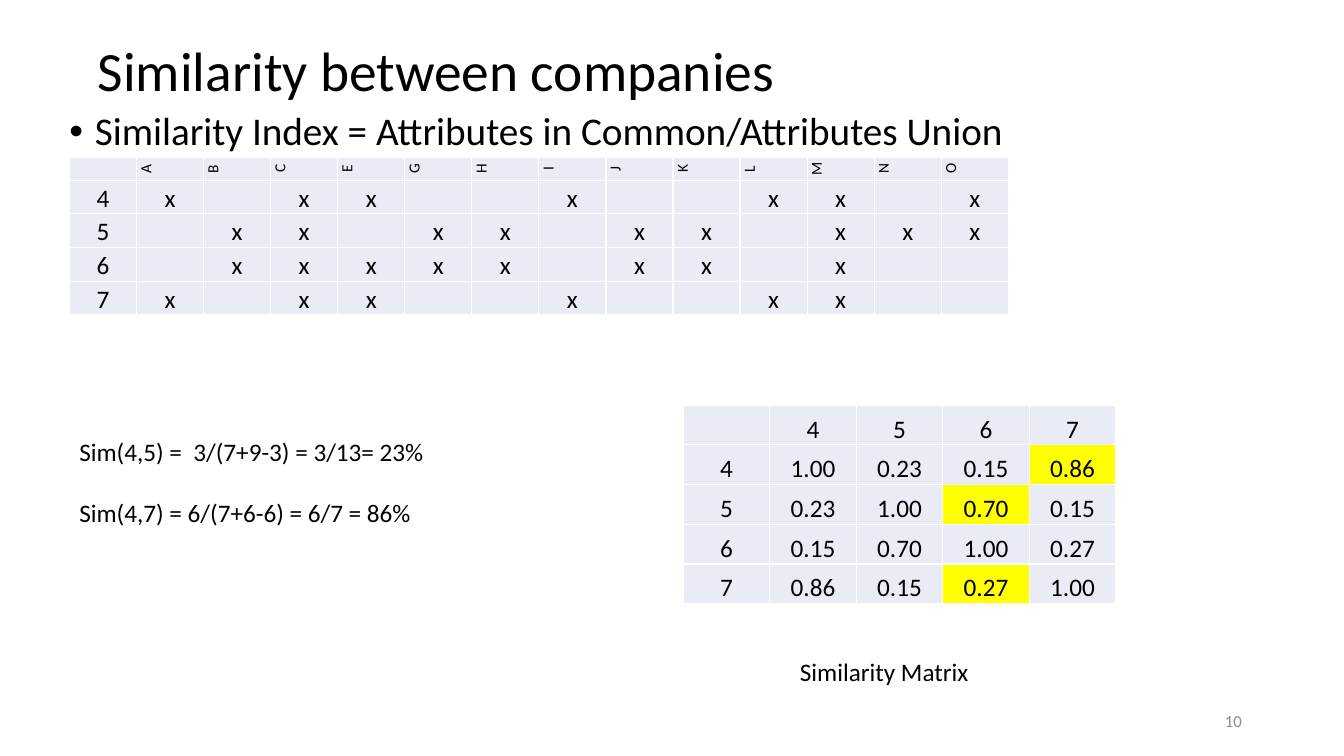
from lxml import etree
from pptx import Presentation
from pptx import util as u
from pptx.dml.color import RGBColor
from pptx.enum import text
from pptx.oxml import parse_xml
from pptx.oxml.ns import nsdecls, qn

LEFT, CENTER, RIGHT = text.PP_ALIGN.LEFT, text.PP_ALIGN.CENTER, text.PP_ALIGN.RIGHT
PALE, YELLOW, WHITE = "E9EBF5", "FFFF00", "FFFFFF"


def add_run(p, words, size, color="000000", align=LEFT):
    p.alignment = align
    r = p.add_run()
    r.text = words
    r.font.name = "Calibri"
    r.font.size = u.Pt(size)
    r.font.color.rgb = RGBColor.from_string(color)


def fill_cell(cell, words, size, fill):
    """Set a cell's text, white borders and fill."""
    cell.margin_left = cell.margin_right = cell.margin_top = cell.margin_bottom = 0
    cell.vertical_anchor = text.MSO_ANCHOR.BOTTOM
    p = cell.text_frame.paragraphs[0]
    if words:
        add_run(p, words, size, align=CENTER)
    else:
        etree.SubElement(p._p, qn("a:endParaRPr"), sz=str(size * 100))
    tcPr = cell._tc.get_or_add_tcPr()
    for side in ("lnL", "lnR", "lnT", "lnB"):
        tcPr.append(parse_xml(
            f'<a:{side} {nsdecls("a")} w="12700"><a:solidFill>'
            f'<a:srgbClr val="{WHITE}"/></a:solidFill></a:{side}>'))
    cell.fill.solid()
    cell.fill.fore_color.rgb = RGBColor.from_string(fill)


prs = Presentation()
prs.slide_width, prs.slide_height = u.Cm(33.87), u.Cm(19.05)
s = prs.slides.add_slide(prs.slide_layouts[5])

# Title
title = s.shapes.title
title.left, title.top, title.width, title.height = u.Cm(2.21), u.Cm(1.02), u.Cm(29.34), u.Cm(1.68)
tf = title.text_frame
tf.auto_size = text.MSO_AUTO_SIZE.NONE
tf.vertical_anchor = text.MSO_ANCHOR.MIDDLE
tf.paragraphs[0].line_spacing = 0.9
add_run(tf.paragraphs[0], "Similarity between companies", 39.6)

# Definition bullet
sp = s.shapes.add_textbox(u.Cm(1.5), u.Cm(2.69), u.Cm(29.34), u.Cm(13.08))
sp.text_frame.word_wrap = True
p = sp.text_frame.paragraphs[0]
p.line_spacing = 0.9
p.space_before = u.Pt(10)
add_run(p, "Similarity Index = Attributes in Common/Attributes Union", 28)
pPr = p._p.get_or_add_pPr()
pPr.set("marL", str(u.Cm(0.64)))
pPr.set("indent", str(-u.Cm(0.64)))
etree.SubElement(pPr, qn("a:buFont"), typeface="Arial")
etree.SubElement(pPr, qn("a:buChar"), char="•")

# Slide number
sp = s.shapes.add_textbox(u.Cm(23.93), u.Cm(17.65), u.Cm(7.62), u.Cm(1.02))
sp.text_frame.word_wrap = True
sp.text_frame.vertical_anchor = text.MSO_ANCHOR.MIDDLE
add_run(sp.text_frame.paragraphs[0], "10", 12, "8C8C8C", RIGHT)

# Worked examples
sp = s.shapes.add_textbox(u.Cm(1.75), u.Cm(10.87), u.Cm(9.3), u.Cm(2.57))
tf = sp.text_frame
tf.word_wrap = False
add_run(tf.paragraphs[0], "Sim(4,5) =  3/(7+9-3) = 3/13= 23%", 18)
p = tf.add_paragraph()
p.space_before = u.Pt(22)
add_run(p, "Sim(4,7) = 6/(7+6-6) = 6/7 = 86%", 18)

# Similarity matrix
companies = "4567"
similarity = [
    ["1.00", "0.23", "0.15", "0.86"],
    ["0.23", "1.00", "0.70", "0.15"],
    ["0.15", "0.70", "1.00", "0.27"],
    ["0.86", "0.15", "0.27", "1.00"],
]
highlights = {(1, 4), (2, 3), (4, 3)}
rows = [["", *companies]] + [[c, *values] for c, values in zip(companies, similarity)]
matrix = s.shapes.add_table(5, 5, u.Cm(17.22), u.Cm(10.21), u.Cm(10.9), u.Cm(5)).table
for col in matrix.columns:
    col.width = u.Cm(2.18)
for i, row in enumerate(rows):
    matrix.rows[i].height = u.Cm(1)
    for j, words in enumerate(row):
        fill_cell(matrix.cell(i, j), words, 18, YELLOW if (i, j) in highlights else PALE)

# Attributes of each company
attributes = "ABCEGHIJKLMNO"
owned = {"4": "ACEILMO", "5": "BCGHJKMNO", "6": "BCEGHJKM", "7": "ACEILM"}
rows = [["", *attributes]]
rows += [[c, *("x" if a in has else "" for a in attributes)] for c, has in owned.items()]
grid = s.shapes.add_table(5, 14, u.Cm(1.75), u.Cm(3.97), u.Cm(23.7), u.Cm(3.97)).table
for col in grid.columns:
    col.width = u.Cm(1.69)
for i, row in enumerate(rows):
    grid.rows[i].height = u.Cm(0.85 if i else 0.57)
    for j, words in enumerate(row):
        cell = grid.cell(i, j)
        fill_cell(cell, words, 18 if i else 11, PALE)
        if i == 0 and j > 0:
            cell._tc.get_or_add_tcPr().set("vert", "vert270")

# Matrix caption
sp = s.shapes.add_textbox(u.Cm(19.91), u.Cm(16.41), u.Cm(4.8), u.Cm(1.02))
sp.text_frame.word_wrap = False
add_run(sp.text_frame.paragraphs[0], "Similarity Matrix", 18)

prs.save("out.pptx")
